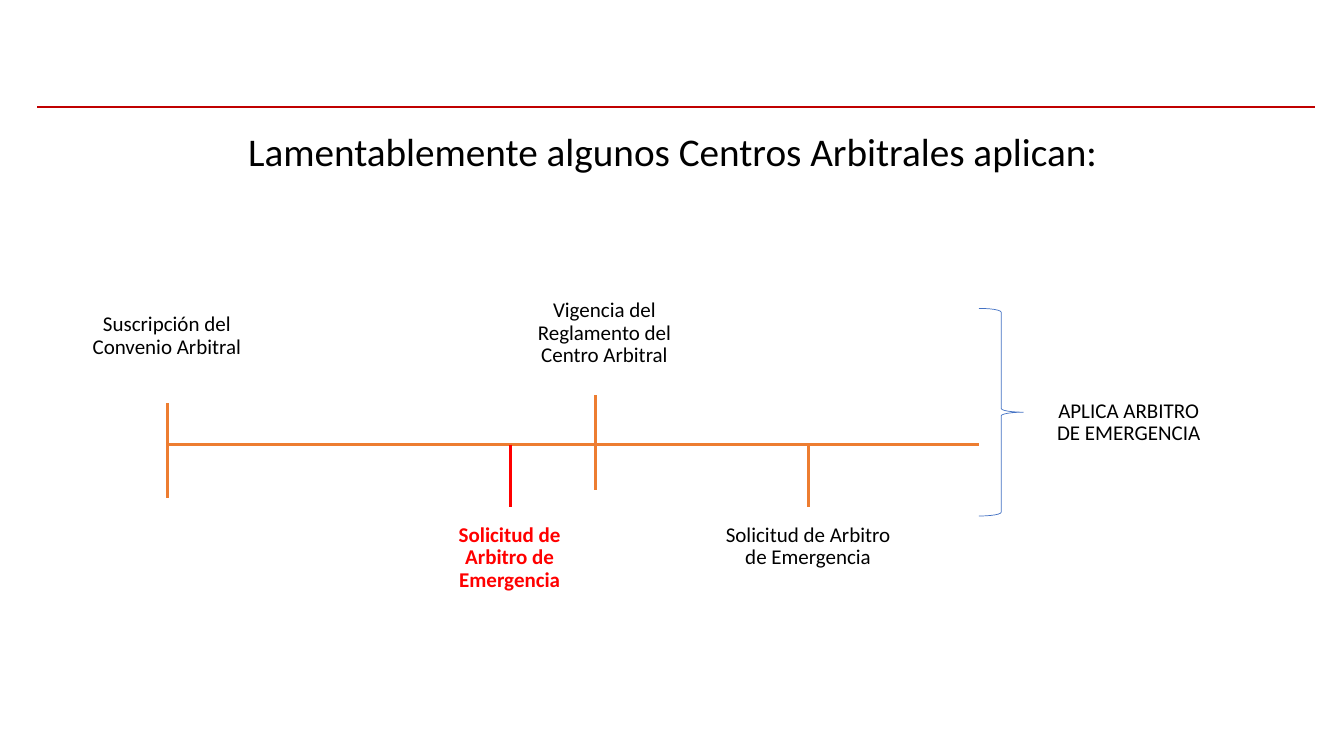
"""Build the slide with a timeline of emergency arbitrator requests."""
from pptx import Presentation
from pptx import util as u
from pptx.dml.color import RGBColor
from pptx.enum import shapes, text
from pptx.oxml.ns import qn
from lxml import etree

COLORS = {"rule": "C00000", "axis": "ED7D31", "alert": "FF0000",
          "brace": "4472C4", "text": "000000"}
FONT = "Calibri"
TITLE = "Lamentablemente algunos Centros Arbitrales aplican:"
AXIS_Y, AXIS_START, AXIS_END = 4.41, 1.66, 9.71
LABEL_WIDTH, LABEL_HEIGHT = 1.87, 0.34

LINES = [
    ((0.37, 1.06), (13.04, 1.06), "rule", 1.5),
    ((AXIS_START, AXIS_Y), (AXIS_END, AXIS_Y), "axis", 2.25),
]
TICKS = [
    (AXIS_START, 4.0, 4.94, "axis"),
    (5.91, 3.92, 4.86, "axis"),
    (8.02, AXIS_Y, 5.03, "axis"),
    (5.06, AXIS_Y, 5.03, "alert"),
]
LABELS = [
    ("Suscripción del Convenio Arbitral", 0.72, 3.06, "text"),
    ("Vigencia del Reglamento del Centro Arbitral", 5.06, 2.92, "text"),
    ("APLICA ARBITRO DE EMERGENCIA", 10.26, 3.92, "text"),
    ("Solicitud de Arbitro de Emergencia", 7.08, 5.15, "text"),
    ("Solicitud de Arbitro de Emergencia", 4.12, 5.15, "alert"),
]


def rgb(name):
    """Return the named colour."""
    return RGBColor.from_string(COLORS[name])


def add_line(slide, start, end, color, width):
    """Draw a straight line without a shadow."""
    points = [u.Inches(value) for value in (*start, *end)]
    line = slide.shapes.add_connector(shapes.MSO_CONNECTOR.STRAIGHT, *points)
    line.line.color.rgb = rgb(color)
    line.line.width = u.Pt(width)
    etree.SubElement(line._element.spPr, qn("a:effectLst"))


def write(shape, wording, size, color="text"):
    """Fill a shape with one centred paragraph."""
    frame = shape.text_frame
    frame.word_wrap = True
    frame.auto_size = text.MSO_AUTO_SIZE.NONE
    frame.vertical_anchor = text.MSO_ANCHOR.TOP
    frame.text = wording
    paragraph = frame.paragraphs[0]
    paragraph.alignment = text.PP_ALIGN.CENTER
    paragraph.line_spacing = 0.9
    paragraph.font.name = FONT
    paragraph.font.size = u.Pt(size)
    paragraph.font.bold = color == "alert"
    paragraph.font.color.rgb = rgb(color)


def main():
    """Assemble and save the presentation."""
    presentation = Presentation()
    presentation.slide_width = u.Inches(13.33)
    presentation.slide_height = u.Inches(7.5)
    slide = presentation.slides.add_slide(presentation.slide_layouts[5])

    title = slide.shapes.title
    title.left, title.top = u.Inches(0.9), u.Inches(1.27)
    title.width, title.height = u.Inches(11.54), u.Inches(0.56)
    write(title, TITLE, 28)

    for line in LINES:
        add_line(slide, *line)
    for x, top, bottom, color in TICKS:
        add_line(slide, (x, top), (x, bottom), color, 2.25)

    brace = slide.shapes.add_shape(
        shapes.MSO_SHAPE.RIGHT_BRACE, u.Inches(AXIS_END), u.Inches(3.06),
        u.Inches(0.44), u.Inches(2.06))
    brace.shadow.inherit = False
    brace.fill.background()
    brace.line.color.rgb = rgb("brace")
    brace.line.width = u.Pt(0.5)

    for wording, left, top, color in LABELS:
        label = slide.shapes.add_textbox(
            u.Inches(left), u.Inches(top),
            u.Inches(LABEL_WIDTH), u.Inches(LABEL_HEIGHT))
        write(label, wording, 15, color)

    presentation.save("out.pptx")


if __name__ == "__main__":
    main()
